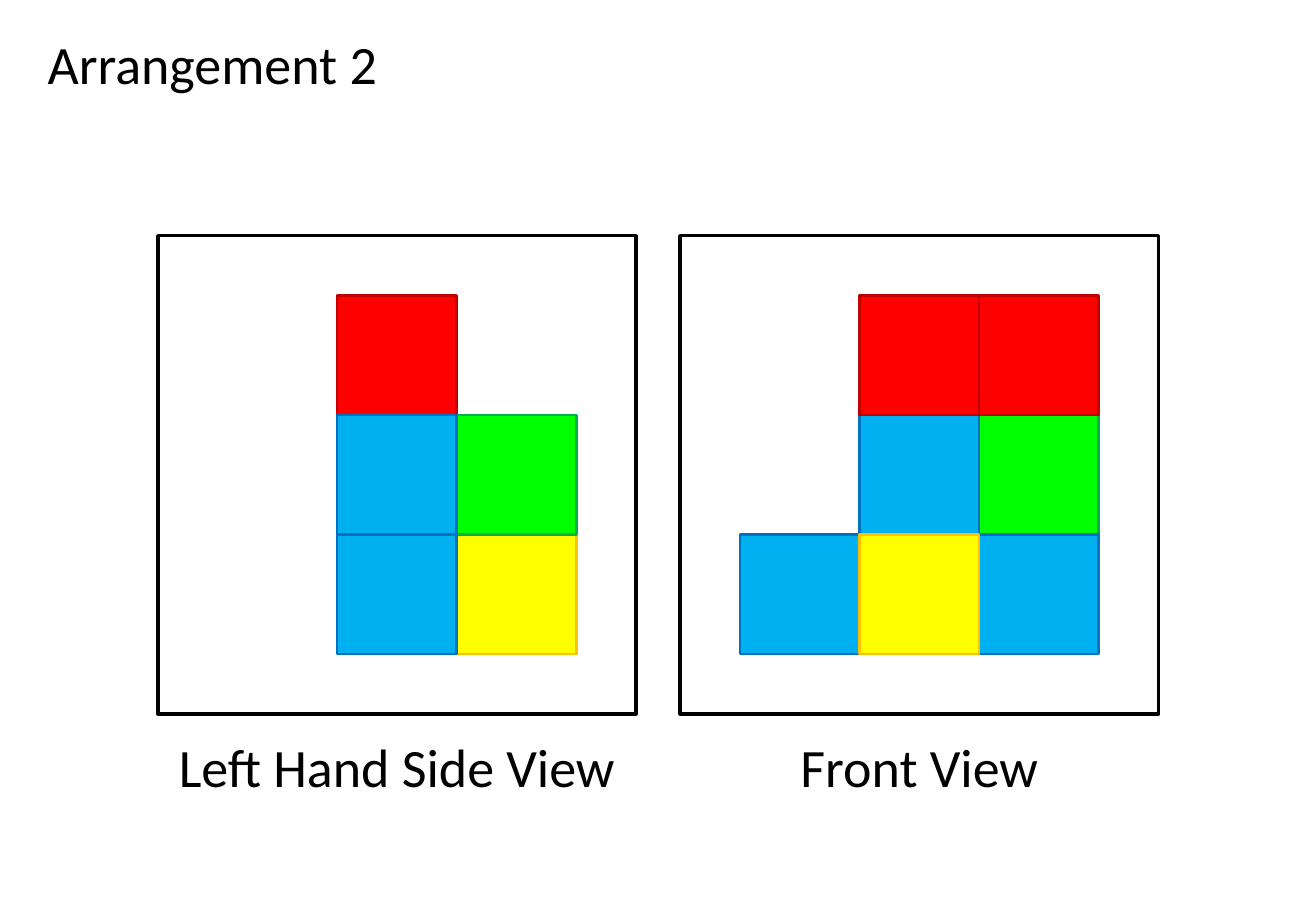
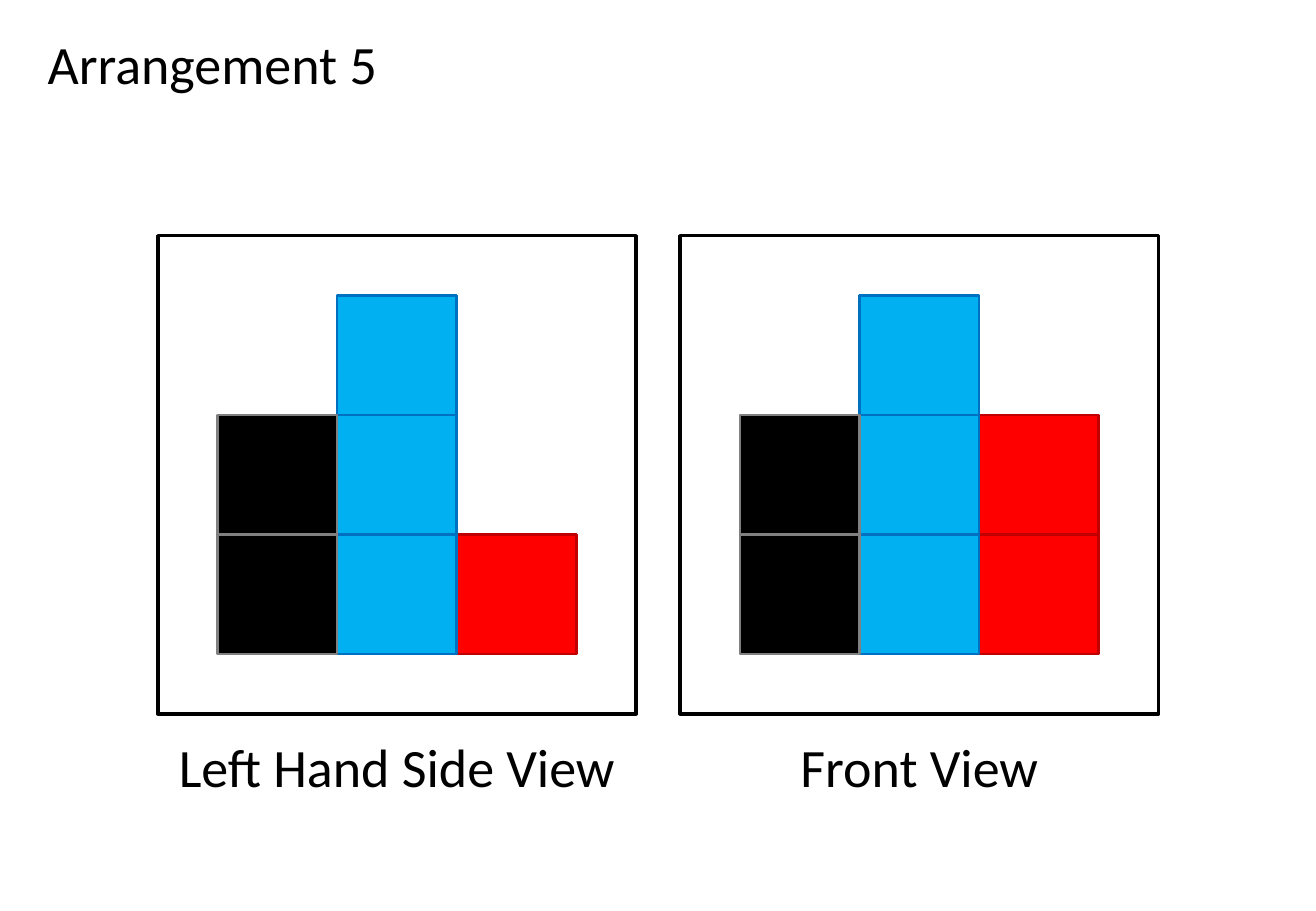
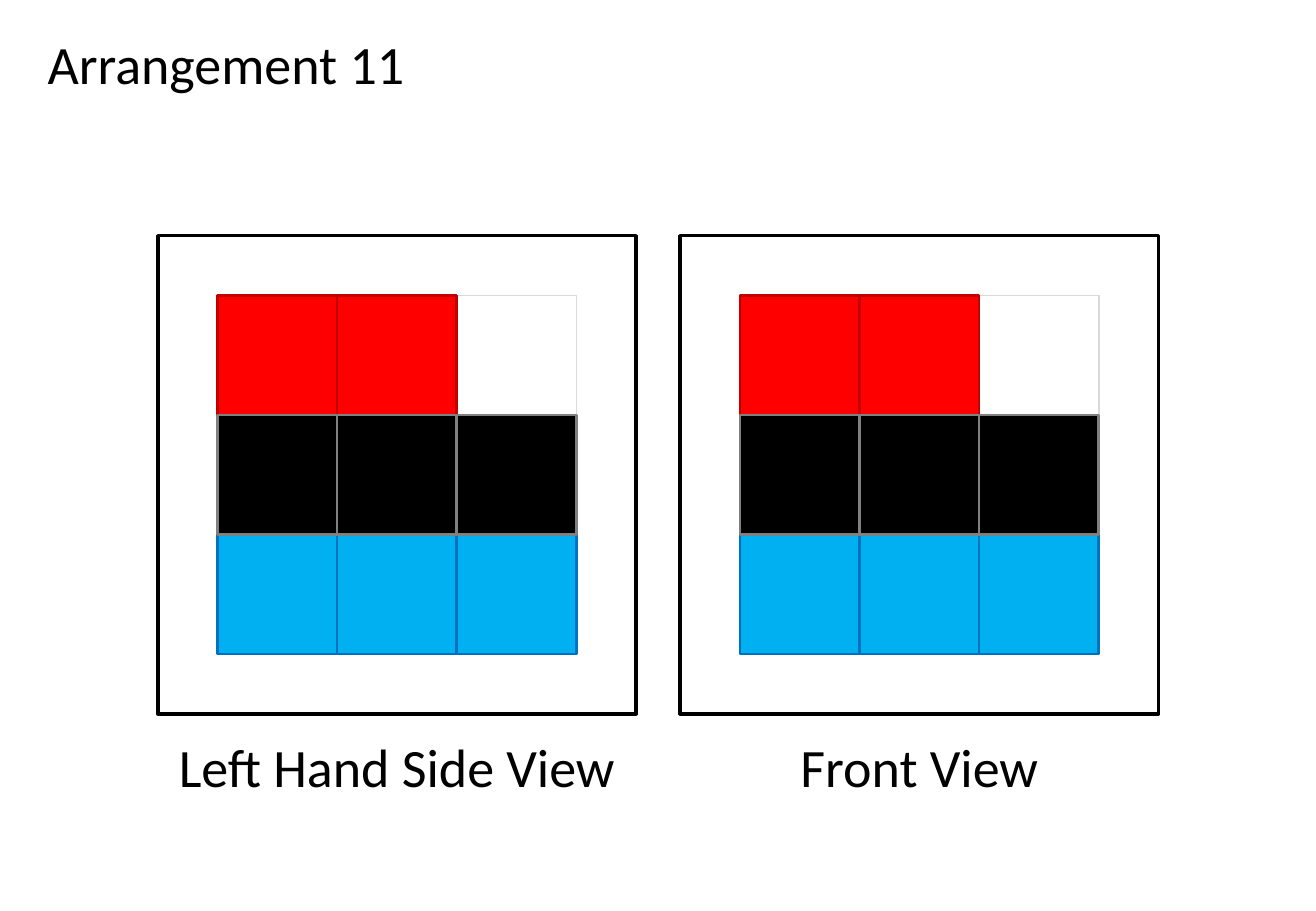
"""Build the cube arrangement slides, each with a left hand side and a front view."""
from dataclasses import dataclass, field

from pptx import Presentation
from pptx.dml.color import RGBColor as Color
from pptx.enum.shapes import MSO_SHAPE as Preset
from pptx.enum.text import MSO_ANCHOR as Anchor, MSO_AUTO_SIZE as AutoSize, PP_ALIGN as Align
from pptx.util import Emu, Pt

EMU_PER_PX = 3600
SLIDE_SIZE = (2751, 1905)
TITLE_BOX = (74, 58, 935, 163)
FRAME_TOP, FRAME_SIZE = 493, 1000
LABEL_TOP, LABEL_HEIGHT = 1521, 163
CUBE = 250
GRID_INSET = (FRAME_SIZE - 3 * CUBE) // 2
VIEWS = (("Left Hand Side View", 330), ("Front View", 1422))

ARRANGEMENTS = (
    ("Arrangement 2", False, (
        ("YRGB", (" R ", " BG", " BY")),
        ("GBRY", (" RR", " BG", "BYB")))),
    ("Arrangement 5", False, (
        ("RBK", (" B ", "KB ", "KBR")),
        ("RBK", (" B ", "KBR", "KBR")))),
    ("Arrangement 11", True, (
        ("RBK", ("RR ", "KKK", "BBB")),
        ("RBK", ("RR ", "KKK", "BBB")))),
)


@dataclass(frozen=True)
class Theme:
    font: str = "Calibri"
    text_size: int = 32
    ink: str = "000000"
    grid: str = "D9D9D9"
    frame_width: float = 2
    grid_width: float = 1
    cube_width: float = 1.5
    cubes: dict = field(default_factory=lambda: {
        "R": ("FF0000", "C00000"),
        "G": ("00FF00", "00B050"),
        "B": ("00B0F0", "0070C0"),
        "Y": ("FFFF00", "FFC000"),
        "K": ("000000", "808080"),
    })


class Deck:
    def __init__(self, theme):
        self.theme = theme
        self.presentation = Presentation()
        self.presentation.slide_width, self.presentation.slide_height = self.lengths(*SLIDE_SIZE)
        self.slide = None

    def lengths(self, *pixels):
        return [Emu(value * EMU_PER_PX) for value in pixels]

    def set_text(self, shape, text, align):
        frame = shape.text_frame
        frame.text = text
        frame.word_wrap = True
        frame.auto_size = AutoSize.NONE
        frame.vertical_anchor = Anchor.MIDDLE
        paragraph = frame.paragraphs[0]
        paragraph.alignment = align
        paragraph.font.name = self.theme.font
        paragraph.font.size = Pt(self.theme.text_size)
        paragraph.font.color.rgb = Color.from_string(self.theme.ink)
        return paragraph

    def add_slide(self, title):
        self.slide = self.presentation.slides.add_slide(self.presentation.slide_layouts[5])
        shape = self.slide.shapes.title
        shape.left, shape.top, shape.width, shape.height = self.lengths(*TITLE_BOX)
        self.set_text(shape, title, Align.LEFT).line_spacing = 0.9

    def label(self, text, left):
        box = self.lengths(left, LABEL_TOP, FRAME_SIZE, LABEL_HEIGHT)
        self.set_text(self.slide.shapes.add_textbox(*box), text, Align.CENTER)

    def square(self, left, top, size, line, width, fill=None):
        box = self.lengths(left, top, size, size)
        shape = self.slide.shapes.add_shape(Preset.RECTANGLE, *box)
        shape.shadow.inherit = False
        shape.line.color.rgb = Color.from_string(line)
        shape.line.width = Pt(width)
        if fill:
            shape.fill.solid()
            shape.fill.fore_color.rgb = Color.from_string(fill)
        else:
            shape.fill.background()

    def view(self, name, left, paint_order, rows, outlined):
        theme = self.theme
        grid_left, grid_top = left + GRID_INSET, FRAME_TOP + GRID_INSET
        self.label(name, left)
        self.square(left, FRAME_TOP, FRAME_SIZE, theme.ink, theme.frame_width)
        if outlined:
            self.square(grid_left, grid_top, 3 * CUBE, theme.grid, theme.grid_width)
        for key in paint_order:
            fill, line = theme.cubes[key]
            for row, cells in enumerate(rows):
                for column, cell in enumerate(cells):
                    if cell == key:
                        self.square(grid_left + column * CUBE, grid_top + row * CUBE,
                                    CUBE, line, theme.cube_width, fill)


def main():
    deck = Deck(Theme())
    for title, outlined, drawings in ARRANGEMENTS:
        deck.add_slide(title)
        for (name, left), (paint_order, rows) in zip(VIEWS, drawings):
            deck.view(name, left, paint_order, rows, outlined)
    deck.presentation.save("out.pptx")


if __name__ == "__main__":
    main()
